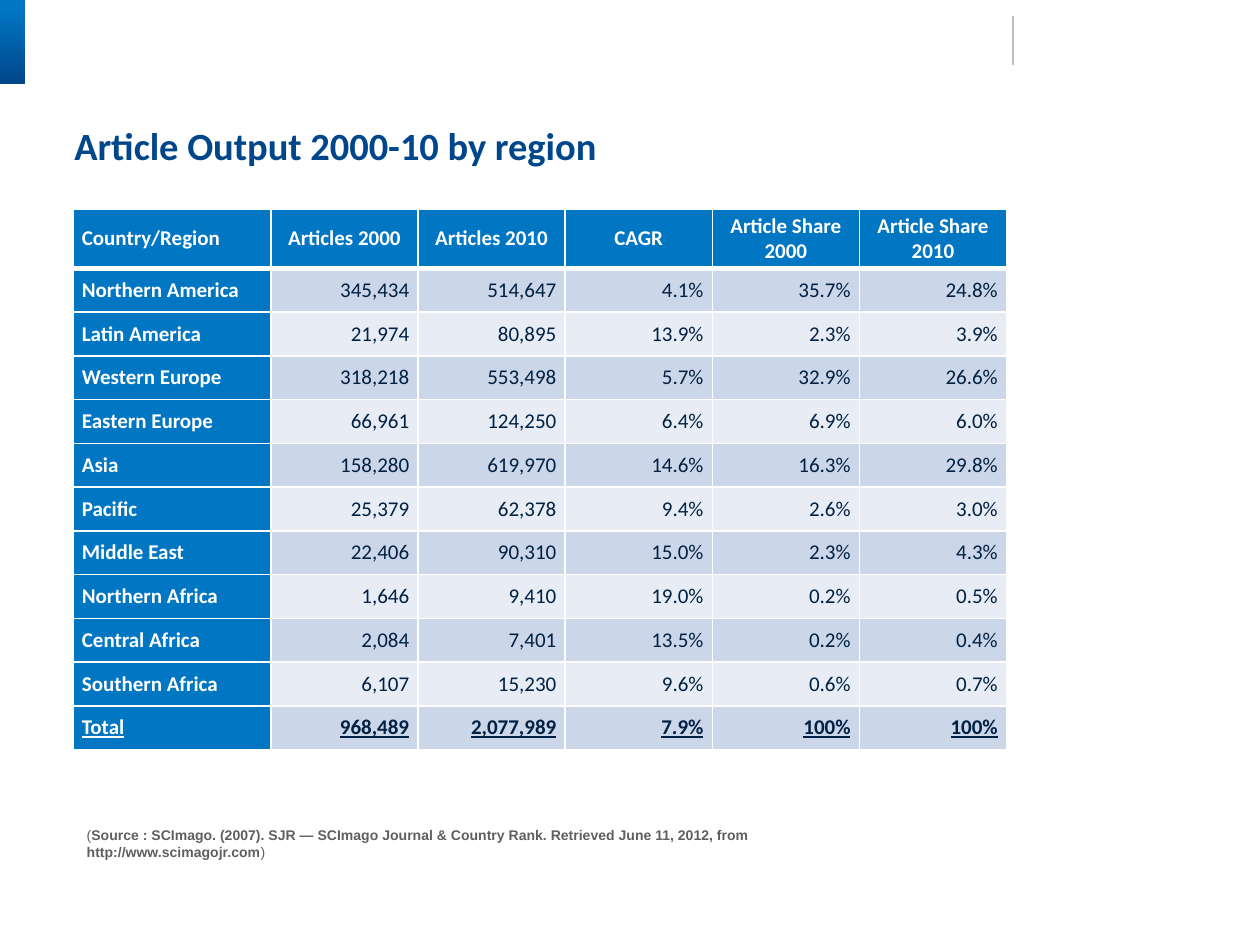
from lxml.etree import SubElement
from pptx import Presentation
from pptx.dml.color import RGBColor
from pptx.enum.shapes import MSO_CONNECTOR, MSO_SHAPE
from pptx.enum.text import MSO_ANCHOR, MSO_AUTO_SIZE, PP_ALIGN
from pptx.oxml import parse_xml
from pptx.oxml.ns import nsdecls, qn
from pptx.util import Inches, Pt


def color(text):
    return RGBColor.from_string(text)


def style(font, name, size, shade, bold=False):
    font.name, font.size, font.bold = name, Pt(size), bold
    font.color.rgb = color(shade)


deck = Presentation()
deck.slide_width, deck.slide_height = Inches(10), Inches(7.5)
slide = deck.slides.add_slide(deck.slide_layouts[5])
shapes = slide.shapes

# Corner bar
bar = shapes.add_shape(MSO_SHAPE.ROUNDED_RECTANGLE, 0, 0, Inches(0.2), Inches(0.67))
bar.adjustments[0] = 0
bar.shadow.inherit = False
bar.line.fill.background()
bar.fill.gradient()
bar.fill.gradient_angle = 270
for stop, (place, shade) in zip(bar.fill.gradient_stops, [(0.1, "0176C3"), (1, "00468A")]):
    stop.position = place
    stop.color.rgb = color(shade)

# Header rule
rule = shapes.add_connector(MSO_CONNECTOR.STRAIGHT, Inches(8.04), Inches(0.13),
                            Inches(8.04), Inches(0.52))
rule.line.color.rgb = color("BFBFBF")
rule.line.width = Pt(0.75)
SubElement(rule._element.spPr, qn("a:effectLst"))

# Title
title = shapes.title
title.left, title.top = Inches(0.59), Inches(1.01)
title.width, title.height = Inches(9.08), Inches(0.33)
frame = title.text_frame
frame.text = "Article Output 2000-10 by region"
frame.margin_left = frame.margin_right = frame.margin_top = frame.margin_bottom = 0
frame.vertical_anchor = MSO_ANCHOR.MIDDLE
frame.auto_size = MSO_AUTO_SIZE.NONE
para = frame.paragraphs[0]
para.alignment = PP_ALIGN.LEFT
para.line_spacing = 0.9
style(para.font, "Calibri", 22, "00468A", True)

# Table of articles by region
rows = [
    ("Country/Region", "Articles 2000", "Articles 2010", "CAGR",
     "Article Share 2000", "Article Share 2010"),
    ("Northern America", "345,434", "514,647", "4.1%", "35.7%", "24.8%"),
    ("Latin America", "21,974", "80,895", "13.9%", "2.3%", "3.9%"),
    ("Western Europe", "318,218", "553,498", "5.7%", "32.9%", "26.6%"),
    ("Eastern Europe", "66,961", "124,250", "6.4%", "6.9%", "6.0%"),
    ("Asia", "158,280", "619,970", "14.6%", "16.3%", "29.8%"),
    ("Pacific", "25,379", "62,378", "9.4%", "2.6%", "3.0%"),
    ("Middle East", "22,406", "90,310", "15.0%", "2.3%", "4.3%"),
    ("Northern Africa", "1,646", "9,410", "19.0%", "0.2%", "0.5%"),
    ("Central Africa", "2,084", "7,401", "13.5%", "0.2%", "0.4%"),
    ("Southern Africa", "6,107", "15,230", "9.6%", "0.6%", "0.7%"),
    ("Total", "968,489", "2,077,989", "7.9%", "100%", "100%"),
]
last = len(rows) - 1
wide, high, head = 7.41, 4.29, 0.47
table = shapes.add_table(len(rows), len(rows[0]), Inches(0.58), Inches(1.66),
                         Inches(wide), Inches(high)).table
for c, col in enumerate(table.columns):
    col.width = Inches(1.57 if c == 0 else (wide - 1.57) / 5)
for r, row in enumerate(table.rows):
    row.height = Inches(head if r == 0 else (high - head) / last)

for r, row in enumerate(rows):
    for c, text in enumerate(row):
        cell = table.cell(r, c)
        cell.text = text
        cell.vertical_anchor = MSO_ANCHOR.MIDDLE
        cell.margin_left = cell.margin_right = Inches(0.07)
        cell.margin_top = cell.margin_bottom = 0
        label = r == 0 or c == 0
        para = cell.text_frame.paragraphs[0]
        para.space_after = Pt(6)
        para.alignment = (PP_ALIGN.LEFT if c == 0 else
                          PP_ALIGN.CENTER if r == 0 else PP_ALIGN.RIGHT)
        style(para.font, "Calibri", 12, "FFFFFF" if label else "002143",
              label or r == last)
        if r == last:
            para.font.underline = True

        # White borders, thick under the header; they stand before the fill
        props = cell._tc.get_or_add_tcPr()
        for side in "LRTB":
            thick = (r, side) in [(0, "B"), (1, "T")]
            props.append(parse_xml(
                f'<a:ln{side} {nsdecls("a")} w="{Pt(3 if thick else 1)}"><a:solidFill>'
                f'<a:srgbClr val="FFFFFF"/></a:solidFill></a:ln{side}>'))
        cell.fill.solid()
        band = "CCD6E9" if r % 2 else "E7ECF5"
        cell.fill.fore_color.rgb = color("0176C3" if label else band)

# Source note
note = shapes.add_textbox(Inches(0.59), Inches(6.51), Inches(6.63), Inches(0.24))
frame = note.text_frame
frame.word_wrap = True
para = frame.paragraphs[0]
cite = ("Source : SCImago. (2007). SJR — SCImago Journal & Country Rank. "
        "Retrieved June 11, 2012, from http://www.scimagojr.com")
for text, bold in [("(", False), (cite, True), (")", False)]:
    run = para.add_run()
    run.text = text
    style(run.font, "Arial", 8, "5F5F5F", bold)

deck.save("out.pptx")
